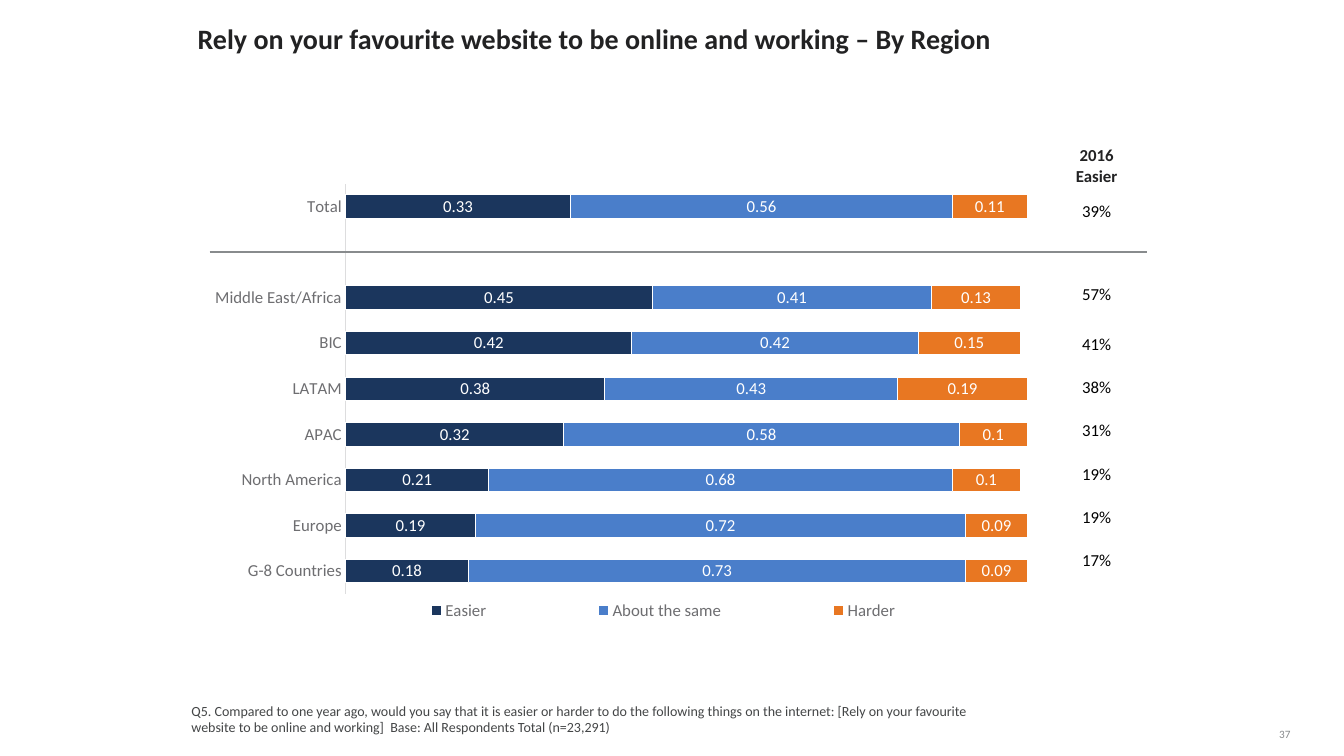
from lxml import etree
from pptx import Presentation
from pptx import util as u
from pptx.chart.data import CategoryChartData
from pptx.dml.color import RGBColor
from pptx.enum import chart as ch
from pptx.enum import shapes, text
from pptx.oxml import parse_xml
from pptx.oxml import ns

COLORS = {
    "title": "222223", "note": "444647", "grey": "888B8D", "axis": "DDDDDE",
    "label": "6E6E71", "black": "000000", "white": "FFFFFF",
    "easier": "1B365D", "same": "4A7ECA", "harder": "E87722",
}
NO_GRID_STYLE = "{2D5ABB26-0587-4C30-8999-92F81FD0307C}"

REGIONS = ["Total", "", "Middle East/Africa", "BIC", "LATAM", "APAC",
           "North America", "Europe", "G-8 Countries"]
ANSWERS = [
    ("Easier", "easier", [0.33, None, 0.45, 0.42, 0.38, 0.32, 0.21, 0.19, 0.18]),
    ("About the same", "same", [0.56, None, 0.41, 0.42, 0.43, 0.58, 0.68, 0.72, 0.73]),
    ("Harder", "harder", [0.11, None, 0.13, 0.15, 0.19, 0.1, 0.1, 0.09, 0.09]),
]
EASIER_TOTAL = [("2016 Easier", 45.4, True), ("39%", 19.4, False)]
EASIER_REGIONS = [("", 22.3, False), ("57%", 39.6, False)] + [
    (share, 31, False) for share in ("41%", "38%", "31%", "19%", "19%", "17%")]


def assign(target, **values):
    for name, value in values.items():
        setattr(target, name, value)


class Deck:
    def __init__(self, prs, font="Calibri"):
        self.prs = prs
        self.font = font
        self.slide = None

    def add_slide(self):
        self.slide = self.prs.slides.add_slide(self.prs.slide_layouts[5])

    def color(self, name):
        return RGBColor.from_string(COLORS[name])

    def style(self, font, size, color, bold=False):
        assign(font, name=self.font, size=u.Pt(size), bold=bold)
        font.color.rgb = self.color(color)

    def fill_text(self, tf, words, size, color, bold=False, **paragraph):
        p = tf.paragraphs[0]
        r = p.add_run()
        r.text = words
        self.style(r.font, size, color, bold)
        assign(p, **paragraph)

    def frame(self, sp, box, **values):
        assign(sp, **dict(zip(("left", "top", "width", "height"), map(u.Pt, box))))
        assign(sp.text_frame, margin_left=0, margin_right=0, margin_top=0,
               margin_bottom=0, auto_size=text.MSO_AUTO_SIZE.NONE, **values)
        return sp.text_frame

    def title(self, words, box):
        tf = self.frame(self.slide.shapes.title, box, word_wrap=True,
                        vertical_anchor=text.MSO_ANCHOR.TOP)
        self.fill_text(tf, words, 20, "title", True, line_spacing=0.9,
                       alignment=text.PP_ALIGN.LEFT)

    def text(self, words, box, size, color, spacing, wrap=True):
        sp = self.slide.shapes.add_textbox(*map(u.Pt, box))
        tf = self.frame(sp, box, word_wrap=wrap,
                        vertical_anchor=text.MSO_ANCHOR.BOTTOM)
        self.fill_text(tf, words, size, color, line_spacing=spacing)

    def line(self, x1, y1, x2, y2, color, width):
        sp = self.slide.shapes.add_connector(
            shapes.MSO_CONNECTOR.STRAIGHT, *map(u.Pt, (x1, y1, x2, y2)))
        sp.line.color.rgb = self.color(color)
        sp.line.width = u.Pt(width)
        etree.SubElement(sp._element.spPr, ns.qn("a:effectLst"))

    def table(self, rows, x, y, width):
        height = sum(row[1] for row in rows)
        sp = self.slide.shapes.add_table(len(rows), 1, *map(u.Pt, (x, y, width, height)))
        table = sp.table
        assign(table, first_row=False, horz_banding=False)
        table._tbl.tblPr.find(ns.qn("a:tableStyleId")).text = NO_GRID_STYLE
        for row, (words, row_height, bold) in zip(table.rows, rows):
            row.height = u.Pt(row_height)
            cell = row.cells[0]
            cell.fill.background()
            assign(cell, margin_left=u.Pt(0.7), margin_right=u.Pt(0.7),
                   margin_top=u.Pt(0.7), margin_bottom=0,
                   vertical_anchor=text.MSO_ANCHOR.MIDDLE)
            if words:
                self.fill_text(cell.text_frame, words, 12, "title" if bold else "black",
                               bold, alignment=text.PP_ALIGN.CENTER)

    def layout(self, x, y, w, h, inner=False):
        target = '<c:layoutTarget val="inner"/>' if inner else ""
        modes = "".join(f'<c:{k}Mode val="edge"/>' for k in "xy")
        sizes = "".join(f'<c:{k} val="{v}"/>' for k, v in zip("xywh", (x, y, w, h)))
        return parse_xml(f'<c:layout {ns.nsdecls("c")}><c:manualLayout>'
                         f'{target}{modes}{sizes}</c:manualLayout></c:layout>')

    def chart(self, categories, series, box):
        data = CategoryChartData()
        data.categories = categories
        for name, _, values in series:
            data.add_series(name, values)
        chart = self.slide.shapes.add_chart(
            ch.XL_CHART_TYPE.BAR_STACKED, *map(u.Pt, box), data).chart
        self.style(chart.font, 10, "title")
        assign(chart, has_title=False, has_legend=True)
        assign(chart.legend, position=ch.XL_LEGEND_POSITION.BOTTOM,
               include_in_layout=False)
        self.style(chart.legend.font, 12, "label")
        axis = chart.category_axis
        assign(axis, reverse_order=True, major_tick_mark=ch.XL_TICK_MARK.NONE)
        self.style(axis.tick_labels.font, 12, "label")
        axis.format.line.color.rgb = self.color("axis")
        axis.format.line.width = u.Pt(0.75)
        assign(chart.value_axis, visible=False, has_major_gridlines=False,
               minimum_scale=0, maximum_scale=1)
        plot = chart.plots[0]
        assign(plot, gap_width=94, overlap=100, vary_by_categories=False)
        for bar, (_, color, _) in zip(plot.series, series):
            bar.format.fill.solid()
            bar.format.fill.fore_color.rgb = self.color(color)
            bar.format.line.color.rgb = self.color("white")
            bar.format.line.width = u.Pt(0.75)
            assign(bar.data_labels, show_value=True,
                   position=ch.XL_LABEL_POSITION.CENTER)
            self.style(bar.data_labels.font, 12, "white")
        area = chart._chartSpace.chart.plotArea
        for old in area.findall(ns.qn("c:layout")):
            area.remove(old)
        area.insert(0, self.layout(0.175, 0.02, 0.805, 0.885, inner=True))
        legend = chart.legend._element
        for old in legend.findall(ns.qn("c:layout")):
            legend.remove(old)
        legend.find(ns.qn("c:legendPos")).addnext(self.layout(0.15, 0.91, 0.8, 0.06))


def main():
    prs = Presentation()
    assign(prs, slide_width=u.Pt(960), slide_height=u.Pt(540))
    deck = Deck(prs)
    deck.add_slide()
    deck.text("37", (913.7, 504, 32.4, 25.2), 8, "grey", 0.85, wrap=False)
    deck.text("Q5. Compared to one year ago, would you say that it is easier or harder "
              "to do the following things on the internet: [Rely on your favourite "
              "website to be online and working]  Base: All Respondents Total (n=23,291)",
              (136.8, 502.6, 571.7, 23), 10, "note", 0.95)
    deck.title("Rely on your favourite website to be online and working – By Region",
               (141.1, 18, 791.3, 31.7))
    deck.chart(REGIONS, ANSWERS, (141.1, 124.6, 604.8, 331.2))
    deck.line(149.8, 180, 819.4, 180, "grey", 1)
    deck.table(EASIER_REGIONS, 756.7, 167.8, 53.3)
    deck.table(EASIER_TOTAL, 756.7, 95.8, 53.3)
    prs.save("out.pptx")


if __name__ == "__main__":
    main()
